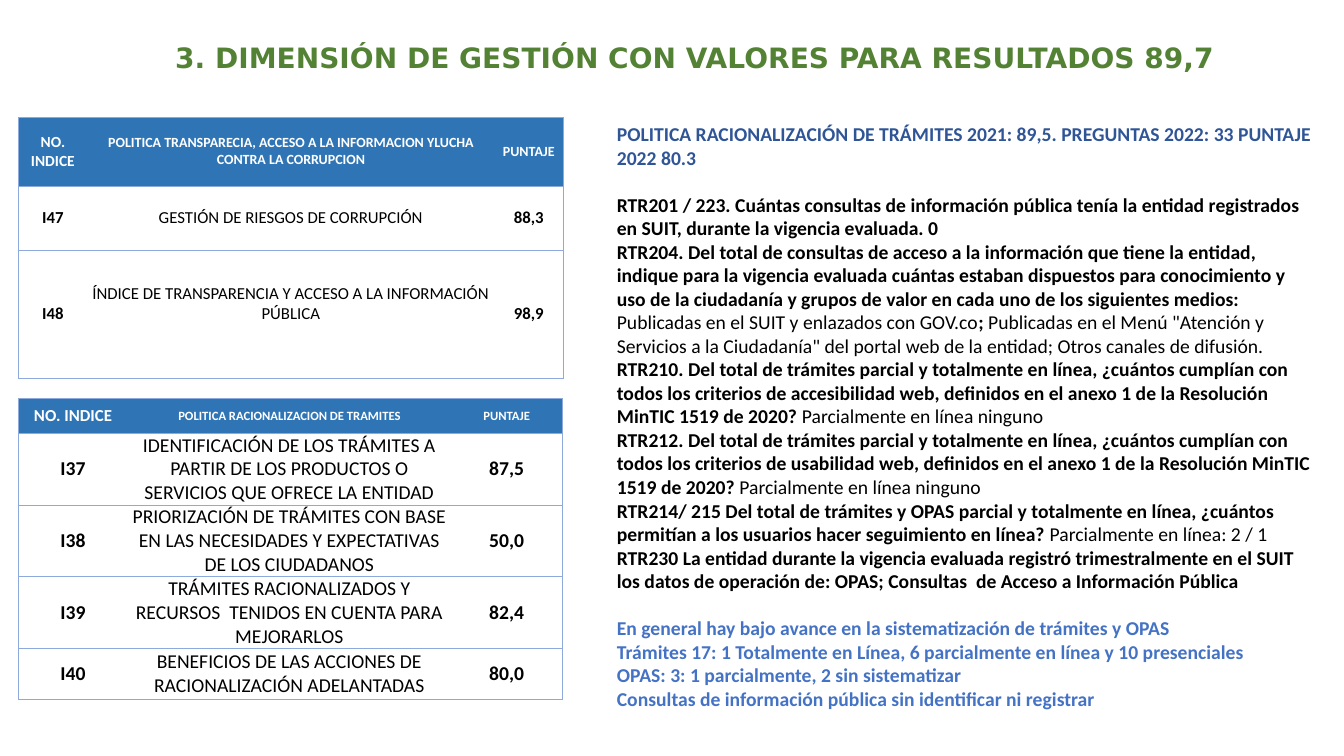
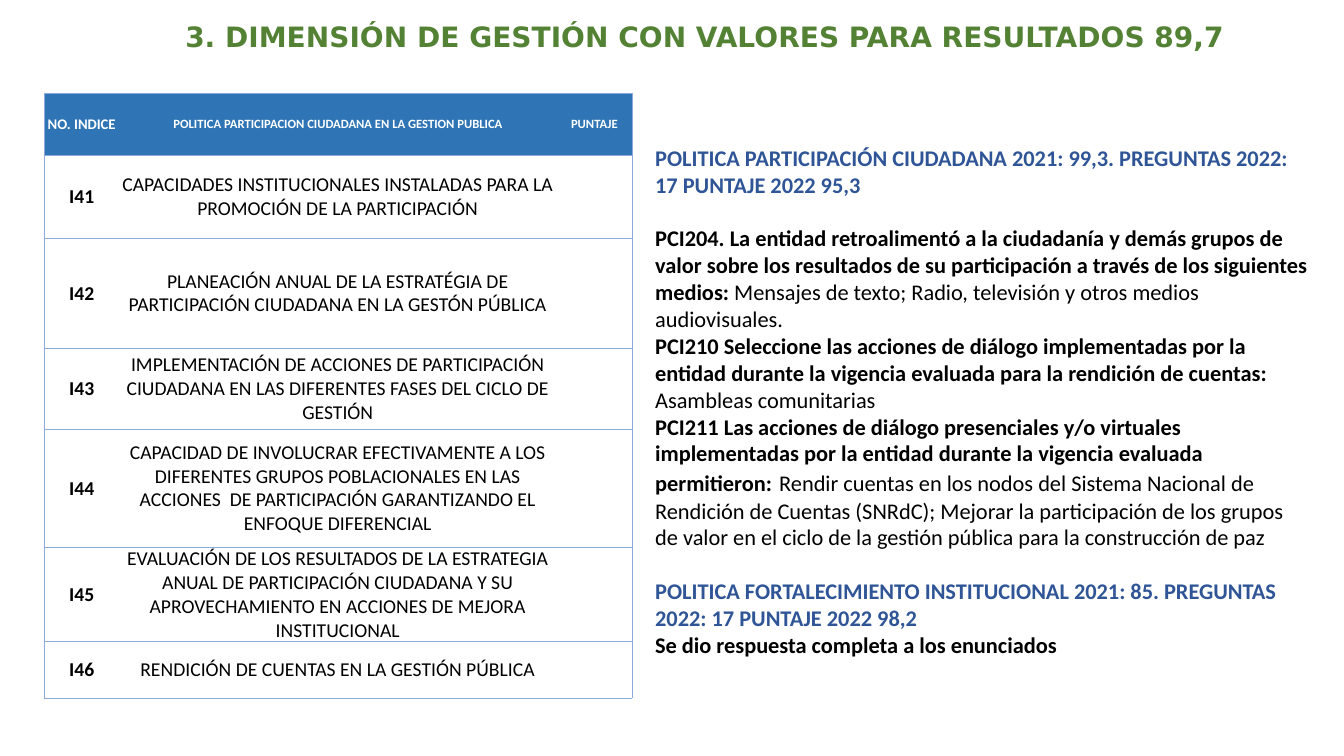
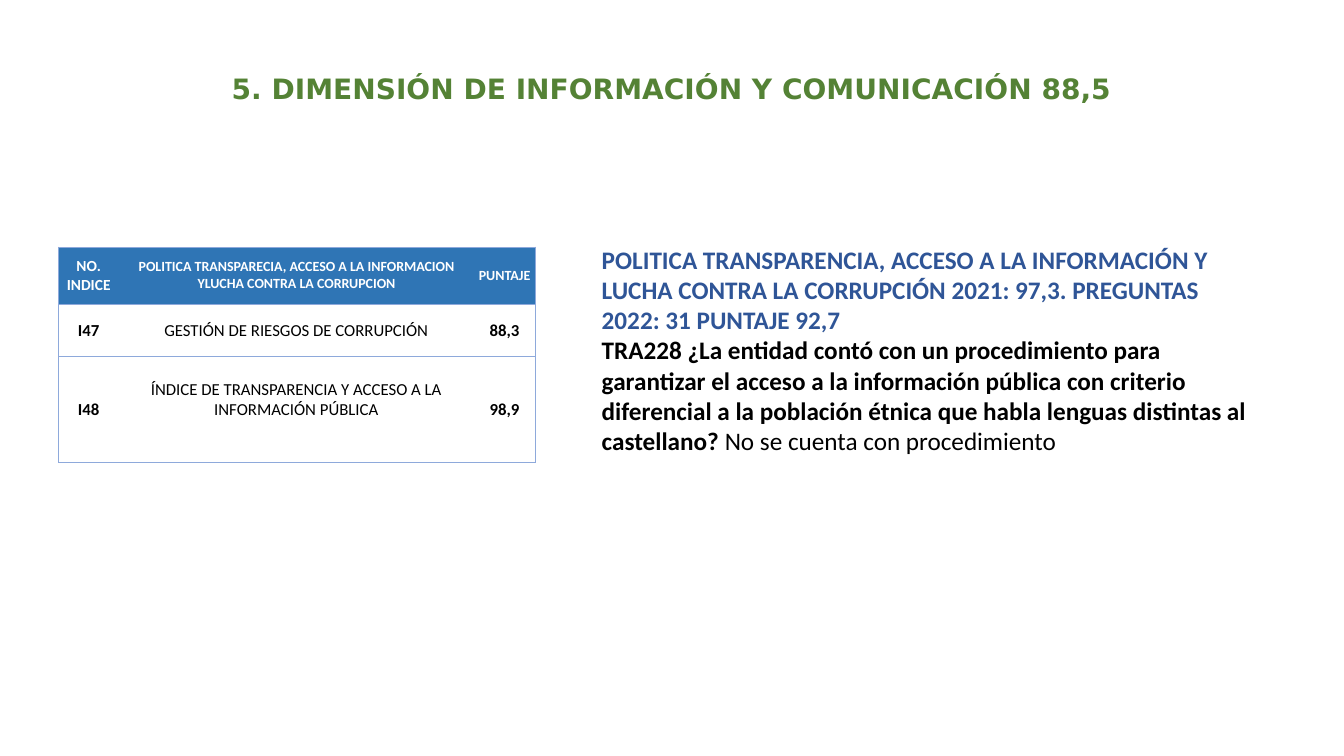
from dataclasses import dataclass
from typing import Optional
from lxml.etree import SubElement
from pptx import Presentation
from pptx.dml.color import RGBColor
from pptx.enum.text import MSO_ANCHOR, PP_ALIGN
from pptx.oxml.ns import qn
from pptx.util import Inches, Pt

HUES = {"title": "548235", "head": "2F75B5", "edge": "8EA9DB", "policy": "2F5597",
        "note": "4472C4", "ink": "000000", "paper": "FFFFFF"}
BODY, TITLE = "Calibri", "DejaVu Sans"
LEAD = 1.2  # line height over font size


@dataclass
class Run:
    text: str
    bold: bool = True
    size: Optional[float] = None
    font: str = BODY


@dataclass
class Para:
    runs: list
    hue: str = "ink"
    gap: bool = False  # one line of space before


def plain(text):
    return Run(text, False)


def policy(text, gap=False):
    return Para([Run(text)], "policy", gap)


def color(hue):
    return RGBColor.from_string(HUES[hue])


def add_run(para, run, size, hue):
    part = para.add_run()
    part.text = run.text
    font = part.font
    font.name, font.bold = run.font, run.bold
    font.size = Pt(run.size or size)
    font.color.rgb = color(hue)


def add_text(slide, box, paras, size, align=PP_ALIGN.LEFT):
    frame = slide.shapes.add_textbox(*map(Inches, box)).text_frame
    frame.word_wrap = True
    for i, item in enumerate(paras):
        para = frame.add_paragraph() if i else frame.paragraphs[0]
        para.alignment = align
        if item.gap:
            para.space_before = Pt(size * LEAD)
        for run in item.runs:
            add_run(para, run, size, item.hue)


def add_title(slide, box, text):
    add_text(slide, box, [Para([Run(text, font=TITLE)], "title")], 20, PP_ALIGN.CENTER)


def set_edges(cell, sides):
    """Draw the named sides of a cell and clear the others."""
    props = cell._tc.get_or_add_tcPr()
    for i, side in enumerate("LRTB"):
        line = SubElement(props, qn(f"a:ln{side}"), w=str(Pt(0.5)))
        if side in sides:
            fill = SubElement(line, qn("a:solidFill"))
            SubElement(fill, qn("a:srgbClr"), val=HUES["edge"])
        else:
            SubElement(line, qn("a:noFill"))
        props.insert(i, line)


def add_scores(slide, spot, cols, heights, rows, heads, size):
    """Score table; heads holds the header sizes of the first and other columns."""
    box = (*spot, sum(cols), sum(heights))
    grid = slide.shapes.add_table(len(rows), len(cols), *map(Inches, box)).table
    grid.first_row = grid.horz_banding = False
    for col, width in zip(grid.columns, cols):
        col.width = Inches(width)
    for row, height in zip(grid.rows, heights):
        row.height = Inches(height)
    for r, texts in enumerate(rows):
        for c, text in enumerate(texts):
            cell = grid.cell(r, c)
            cell.margin_left = cell.margin_right = cell.margin_top = cell.margin_bottom = 0
            cell.vertical_anchor = MSO_ANCHOR.MIDDLE
            cell.fill.solid()
            cell.fill.fore_color.rgb = color("paper" if r else "head")
            set_edges(cell, ("LTB", "TB", "TBR")[c])
            para = cell.text_frame.paragraphs[0]
            para.alignment = PP_ALIGN.CENTER
            if text:
                points = size if r else heads[min(c, 1)]
                add_run(para, Run(text, r == 0 or c != 1), points, "ink" if r else "paper")
    return grid


def header(name):
    return ("NO. INDICE", name, "PUNTAJE")


OPEN = [
    header("POLITICA TRANSPARECIA, ACCESO A LA INFORMACION YLUCHA CONTRA LA CORRUPCION"),
    ("I47", "GESTIÓN DE RIESGOS DE CORRUPCIÓN", "88,3"),
    ("I48", "ÍNDICE DE TRANSPARENCIA Y ACCESO A LA INFORMACIÓN PÚBLICA", "98,9"),
]
STEPS = [
    header("POLITICA RACIONALIZACION DE TRAMITES"),
    ("I37", "IDENTIFICACIÓN DE LOS TRÁMITES A PARTIR DE LOS PRODUCTOS O SERVICIOS "
     "QUE OFRECE LA ENTIDAD", "87,5"),
    ("I38", "PRIORIZACIÓN DE TRÁMITES CON BASE EN LAS NECESIDADES Y EXPECTATIVAS "
     "DE LOS CIUDADANOS", "50,0"),
    ("I39", "TRÁMITES RACIONALIZADOS Y RECURSOS  TENIDOS EN CUENTA PARA MEJORARLOS", "82,4"),
    ("I40", "BENEFICIOS DE LAS ACCIONES DE RACIONALIZACIÓN ADELANTADAS", "80,0"),
]
CIVIC = [
    header("POLITICA PARTICIPACION CIUDADANA EN LA GESTION PUBLICA"),
    ("I41", "CAPACIDADES INSTITUCIONALES INSTALADAS PARA LA PROMOCIÓN DE LA PARTICIPACIÓN", ""),
    ("I42", "PLANEACIÓN ANUAL DE LA ESTRATÉGIA DE PARTICIPACIÓN CIUDADANA "
     "EN LA GESTÓN PÚBLICA", ""),
    ("I43", "IMPLEMENTACIÓN DE ACCIONES DE PARTICIPACIÓN CIUDADANA EN LAS DIFERENTES "
     "FASES DEL CICLO DE GESTIÓN", ""),
    ("I44", "CAPACIDAD DE INVOLUCRAR EFECTIVAMENTE A LOS DIFERENTES GRUPOS POBLACIONALES "
     "EN LAS ACCIONES  DE PARTICIPACIÓN GARANTIZANDO EL ENFOQUE DIFERENCIAL", ""),
    ("I45", "EVALUACIÓN DE LOS RESULTADOS DE LA ESTRATEGIA ANUAL DE PARTICIPACIÓN CIUDADANA "
     "Y SU APROVECHAMIENTO EN ACCIONES DE MEJORA INSTITUCIONAL", ""),
    ("I46", "RENDICIÓN DE CUENTAS EN LA GESTIÓN PÚBLICA", ""),
]
VALUES = "3. DIMENSIÓN DE GESTIÓN CON VALORES PARA RESULTADOS 89,7"


def add_open(slide, spot, cols, heights):
    grid = add_scores(slide, spot, cols, heights, OPEN, (11, 10), 12)
    grid.cell(2, 1).margin_bottom = Inches(0.2)  # raises the text half a line


def steps_slide(slide):
    add_open(slide, (0.18, 1.16), (0.69, 4.03, 0.69), (0.69, 0.63, 1.27))
    add_scores(slide, (0.18, 3.95), (1.09, 3.2, 1.11), (0.35, 0.69, 0.69, 0.69, 0.51),
               STEPS, (12, 9), 14)
    # Findings
    web = ("Del total de trámites parcial y totalmente en línea, ¿cuántos cumplían con todos "
           "los criterios de {} web, definidos en el anexo 1 de la Resolución MinTIC 1519 "
           "de 2020? ")
    none = plain("Parcialmente en línea ninguno")
    notes = ("En general hay bajo avance en la sistematización de trámites y OPAS",
             "Trámites 17: 1 Totalmente en Línea, 6 parcialmente en línea y 10 presenciales",
             "OPAS: 3: 1 parcialmente, 2 sin sistematizar",
             "Consultas de información pública sin identificar ni registrar")
    add_text(slide, (6.02, 1.16, 7.13, 5.99), [
        policy("POLITICA RACIONALIZACIÓN DE TRÁMITES 2021: 89,5. PREGUNTAS 2022: 33 "
               "PUNTAJE 2022 80.3"),
        Para([Run("RTR201 / 223. Cuántas consultas de información pública tenía la entidad "
                  "registrados en SUIT, durante la vigencia evaluada. 0")], gap=True),
        Para([Run("RTR204. Del total de consultas de acceso a la información que tiene la "
                  "entidad, indique para la vigencia evaluada cuántas estaban dispuestos para "
                  "conocimiento y uso de la ciudadanía y grupos de valor en cada uno de los "
                  "siguientes medios: "),
              plain("Publicadas en el SUIT y enlazados con GOV.co"), Run("; "),
              plain("Publicadas en el Menú \"Atención y Servicios a la Ciudadanía\" del portal "
                    "web de la entidad; Otros canales de difusión.")]),
        Para([Run("RTR210. " + web.format("accesibilidad")), none]),
        Para([Run("RTR212. " + web.format("usabilidad")), none]),
        Para([Run("RTR214/ 215 Del total de trámites y OPAS parcial y totalmente en línea, "
                  "¿cuántos permitían a los usuarios hacer seguimiento en línea? "),
              plain("Parcialmente en línea: 2 / 1")]),
        Para([Run("RTR230 La entidad durante la vigencia evaluada registró trimestralmente en "
                  "el SUIT los datos de operación de: OPAS; Consultas  de Acceso a "
                  "Información Pública")]),
        *(Para([Run(note)], "note", i == 0) for i, note in enumerate(notes)),
    ], 14)
    add_title(slide, (1.39, 0.35, 11, 0.44), VALUES)


def civic_slide(slide):
    # Findings
    add_text(slide, (6.4, 1.38, 6.67, 5.56), [
        policy("POLITICA PARTICIPACIÓN CIUDADANA 2021: 99,3. PREGUNTAS 2022: 17 "
               "PUNTAJE 2022 95,3"),
        Para([Run("PCI204. La entidad retroalimentó a la ciudadanía y demás grupos de valor "
                  "sobre los resultados de su participación a través de los siguientes medios: "),
              plain("Mensajes de texto; Radio, televisión y otros medios audiovisuales.")],
             gap=True),
        Para([Run("PCI210 Seleccione las acciones de diálogo implementadas por la entidad "
                  "durante la vigencia evaluada para la rendición de cuentas: "),
              plain("Asambleas comunitarias")]),
        Para([Run("PCI211 Las acciones de diálogo presenciales y/o virtuales implementadas por "
                  "la entidad durante la vigencia evaluada permitieron:"),
              Run(" ", False, 18, "Arial"),
              plain("Rendir cuentas en los nodos del Sistema Nacional de Rendición de Cuentas "
                    "(SNRdC); Mejorar la participación de los grupos de valor en el ciclo de la "
                    "gestión pública para la construcción de paz")]),
        policy("POLITICA FORTALECIMIENTO INSTITUCIONAL 2021: 85. PREGUNTAS 2022: 17 "
               "PUNTAJE 2022 98,2", gap=True),
        Para([Run("Se dio respuesta completa a los enunciados")]),
    ], 16)
    add_scores(slide, (0.44, 0.93), (0.74, 4.34, 0.75),
               (0.61, 0.82, 1.1, 0.8, 1.17, 0.93, 0.56), CIVIC, (10.5, 9), 14)
    add_title(slide, (1.49, 0.14, 11, 0.44), VALUES)


def open_slide(slide):
    add_open(slide, (0.58, 2.45), (0.6, 3.52, 0.61), (0.57, 0.52, 1.05))
    add_title(slide, (1.72, 0.66, 9.88, 0.44),
              "5. DIMENSIÓN DE INFORMACIÓN Y COMUNICACIÓN 88,5")
    # Findings
    add_text(slide, (5.87, 2.37, 6.67, 2.22), [
        policy("POLITICA TRANSPARENCIA, ACCESO A LA INFORMACIÓN Y LUCHA CONTRA LA CORRUPCIÓN "
               "2021: 97,3. PREGUNTAS 2022: 31 PUNTAJE 92,7"),
        Para([Run("TRA228 ¿La entidad contó con un procedimiento para garantizar el acceso a la "
                  "información pública con criterio diferencial a la población étnica que habla "
                  "lenguas distintas al castellano? "),
              plain("No se cuenta con procedimiento")]),
    ], 18)


def main():
    deck = Presentation()
    deck.slide_width, deck.slide_height = Inches(13.33), Inches(7.5)
    for build in (steps_slide, civic_slide, open_slide):
        build(deck.slides.add_slide(deck.slide_layouts[6]))
    deck.save("out.pptx")


if __name__ == "__main__":
    main()
